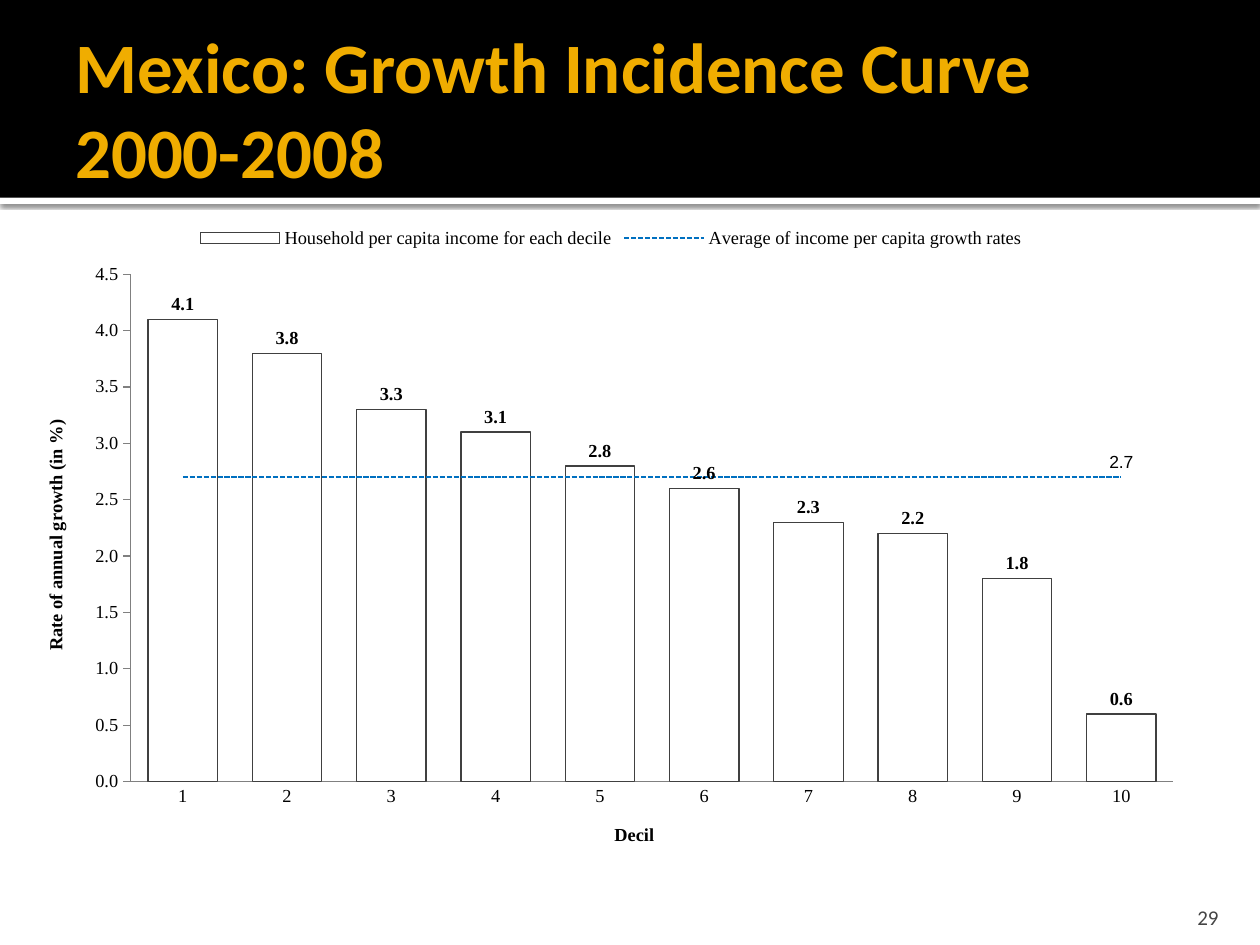
from lxml import etree
from pptx import Presentation
from pptx import util as u
from pptx.chart.data import CategoryChartData
from pptx.dml.color import RGBColor
from pptx.enum import chart as charts, dml, shapes, text
from pptx.oxml import parse_xml
from pptx.oxml.ns import nsdecls, qn

Pt = u.Pt

# Content
TITLE = "Mexico: Growth Incidence Curve 2000-2008"
PAGE_NUMBER = "29"
BARS = ("Household per capita income for each decile",
        [4.1, 3.8, 3.3, 3.1, 2.8, 2.6, 2.3, 2.2, 1.8, 0.6])
AVERAGE = ("Average of income per capita growth rates", 2.7)
DECILES = [str(decile) for decile in range(1, 11)]
AXIS_TITLES = {"category": "Decil", "value": "Rate of annual growth (in %)"}
NUMBER_FORMAT = "#,##0.0"

# Colours and geometry
BLACK = RGBColor(0, 0, 0)
WHITE = RGBColor(255, 255, 255)
GOLD = RGBColor(0xF0, 0xAD, 0x00)
GREY = RGBColor(0x45, 0x45, 0x45)
BAR_LINE = RGBColor(0x40, 0x40, 0x40)
AXIS_LINE = RGBColor(0x80, 0x80, 0x80)
BLUE = RGBColor(0x00, 0x70, 0xC0)
WIDTH, HEIGHT, HEADER = 720, 540, 113
PLOT_AREA = {"x": 0.09, "y": 0.09, "w": 0.89, "h": 0.76}


def set_format(target, **values):
    for name, value in values.items():
        setattr(target, name, value)


def set_font(font, color=BLACK, **values):
    set_format(font, **values)
    font.color.rgb = color


def set_line(line, color, width, dash=None):
    line.color.rgb = color
    set_format(line, width=Pt(width), dash_style=dash)


def add_band(slide, top, height, color):
    band = slide.shapes.add_shape(shapes.MSO_SHAPE.RECTANGLE, 0, Pt(top), Pt(WIDTH), Pt(height))
    band.shadow.inherit = False
    band.fill.solid()
    band.fill.fore_color.rgb = color
    band.line.fill.background()
    return band


def add_text(slide, box, wording, frame_format, font_format, align):
    frame = slide.shapes.add_textbox(*map(Pt, box)).text_frame
    set_format(frame, word_wrap=True, **frame_format)
    paragraph = frame.paragraphs[0]
    paragraph.alignment = align
    run = paragraph.add_run()
    run.text = wording
    set_font(run.font, name="Calibri", **font_format)


def add_growth_chart(slide):
    data = CategoryChartData(number_format=NUMBER_FORMAT)
    data.categories = DECILES
    data.add_series(*BARS)
    data.add_series(AVERAGE[0], [AVERAGE[1]] * len(DECILES))
    chart = slide.shapes.add_chart(charts.XL_CHART_TYPE.COLUMN_CLUSTERED,
                                   Pt(14.4), Pt(122.4), Pt(669.6), Pt(381.6), data).chart
    set_font(chart.font, name="Times New Roman", size=Pt(10.5))
    set_format(chart, has_title=False, has_legend=True)
    set_format(chart.legend, position=charts.XL_LEGEND_POSITION.TOP, include_in_layout=False)
    move_average_to_line(chart)
    place_plot_area(chart)
    return chart


def move_average_to_line(chart):
    bar_chart = chart.plots[0]._element
    series = bar_chart.findall(qn("c:ser"))[1]
    line_chart = parse_xml(f'<c:lineChart {nsdecls("c")}><c:grouping val="standard"/>'
                           '<c:varyColors val="0"/><c:marker val="1"/></c:lineChart>')
    for bar_setting in series.findall(qn("c:invertIfNegative")):
        series.remove(bar_setting)
    line_chart.insert(2, series)
    for axis in bar_chart.findall(qn("c:axId")):
        etree.SubElement(line_chart, qn("c:axId")).set("val", axis.get("val"))
    bar_chart.addnext(line_chart)


def place_plot_area(chart):
    plot_area = chart._chartSpace.find(qn("c:chart")).find(qn("c:plotArea"))
    for old in plot_area.findall(qn("c:layout")):
        plot_area.remove(old)
    modes = {"layoutTarget": "inner", "xMode": "edge", "yMode": "edge"}
    parts = "".join(f'<c:{name} val="{value}"/>' for name, value in {**modes, **PLOT_AREA}.items())
    plot_area.insert(0, parse_xml(f'<c:layout {nsdecls("c")}><c:manualLayout>{parts}'
                                  '</c:manualLayout></c:layout>'))


def style_series(chart):
    bar_plot, line_plot = chart.plots
    set_format(bar_plot, gap_width=50, vary_by_categories=False)
    bars, average = bar_plot.series[0], line_plot.series[0]
    bars.format.fill.solid()
    bars.format.fill.fore_color.rgb = WHITE
    set_line(bars.format.line, BAR_LINE, 0.75)
    set_format(bars.data_labels, show_value=True, number_format=NUMBER_FORMAT,
               number_format_is_linked=False, position=charts.XL_LABEL_POSITION.OUTSIDE_END)
    set_font(bars.data_labels.font, name="Times New Roman", size=Pt(10.5), bold=True)

    average.smooth = False
    average.marker.style = charts.XL_MARKER_STYLE.NONE
    set_line(average.format.line, BLUE, 1, dml.MSO_LINE.SQUARE_DOT)
    set_format(average.data_labels, show_value=False, number_format=NUMBER_FORMAT,
               number_format_is_linked=False)
    last_label = average.points[len(DECILES) - 1].data_label
    last_label.position = charts.XL_LABEL_POSITION.ABOVE
    set_font(last_label.font, name="Arial", size=Pt(10), bold=False)


def style_axes(chart):
    tick = charts.XL_TICK_MARK
    set_format(chart.value_axis, minimum_scale=0, maximum_scale=4.5, major_unit=0.5)
    set_format(chart.value_axis.tick_labels, number_format=NUMBER_FORMAT,
               number_format_is_linked=False)
    for axis, title, mark in ((chart.category_axis, AXIS_TITLES["category"], tick.NONE),
                              (chart.value_axis, AXIS_TITLES["value"], tick.OUTSIDE)):
        set_format(axis, has_major_gridlines=False, major_tick_mark=mark,
                   minor_tick_mark=tick.NONE)
        set_line(axis.format.line, AXIS_LINE, 0.75)
        frame = axis.axis_title.text_frame
        frame.text = title
        set_font(frame.paragraphs[0].runs[0].font, name="Times New Roman", size=Pt(10.5), bold=True)


def main():
    presentation = Presentation()
    set_format(presentation, slide_width=Pt(WIDTH), slide_height=Pt(HEIGHT))
    slide = presentation.slides.add_slide(presentation.slide_layouts[6])

    # Header: white strip with a soft shadow under a black band
    strip = add_band(slide, HEADER, 3.6, WHITE)
    effects = strip._element.spPr.find(qn("a:effectLst"))
    effects.append(parse_xml(
        f'<a:outerShdw {nsdecls("a")} blurRad="{Pt(2.5)}" dist="{Pt(0.8)}" dir="5400000" '
        'rotWithShape="0"><a:srgbClr val="000000"><a:alpha val="60000"/></a:srgbClr></a:outerShdw>'))
    add_band(slide, 0, HEADER, BLACK)
    add_text(slide, (36, 12.24, 648, 98.64), TITLE,
             dict(vertical_anchor=text.MSO_ANCHOR.MIDDLE, margin_left=Pt(7.2),
                  margin_right=Pt(3.6), margin_top=Pt(3.6), margin_bottom=Pt(3.6)),
             dict(size=Pt(40.5), bold=True, color=GOLD), text.PP_ALIGN.LEFT)

    # Page number
    add_text(slide, (645.84, 509.76, 57.6, 21.6), PAGE_NUMBER,
             dict(vertical_anchor=text.MSO_ANCHOR.BOTTOM, margin_bottom=0),
             dict(size=Pt(12), color=GREY), text.PP_ALIGN.RIGHT)

    # Growth incidence chart
    chart = add_growth_chart(slide)
    style_series(chart)
    style_axes(chart)
    presentation.save("out.pptx")


if __name__ == "__main__":
    main()
